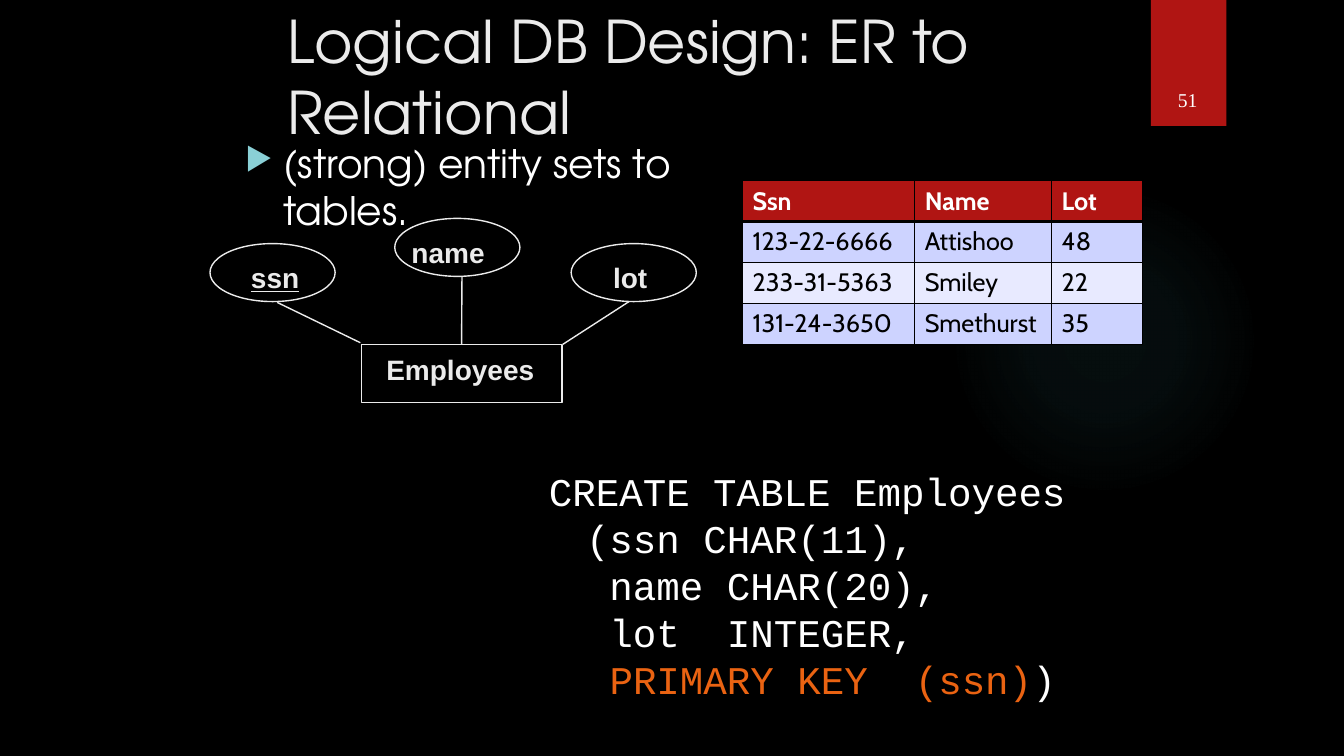
from dataclasses import dataclass
from typing import Optional

from lxml import etree
from pptx import Presentation
from pptx.dml.color import RGBColor
from pptx.enum.shapes import MSO_CONNECTOR, MSO_SHAPE
from pptx.enum.text import MSO_ANCHOR, MSO_AUTO_SIZE, PP_ALIGN
from pptx.oxml import parse_xml
from pptx.oxml.ns import nsdecls, qn
from pptx.util import Inches, Length, Pt

OVAL, RECTANGLE = MSO_SHAPE.OVAL, MSO_SHAPE.RECTANGLE
STRAIGHT = MSO_CONNECTOR.STRAIGHT
TOP, BOTTOM = MSO_ANCHOR.TOP, MSO_ANCHOR.BOTTOM
LEFT, CENTER = PP_ALIGN.LEFT, PP_ALIGN.CENTER
GROW, FIXED = MSO_AUTO_SIZE.SHAPE_TO_FIT_TEXT, MSO_AUTO_SIZE.NONE

BLACK = RGBColor(0x00, 0x00, 0x00)
WHITE = RGBColor(0xFF, 0xFF, 0xFF)
PALE = RGBColor(0xEB, 0xEB, 0xEB)
RED = RGBColor(0xB0, 0x15, 0x13)
ORANGE = RGBColor(0xEA, 0x63, 0x12)
AQUA = RGBColor(0x8A, 0xD0, 0xD6)
TEAL = RGBColor(0x50, 0xB9, 0xC1)
ROW_FILLS = (RGBColor(0xCD, 0xD3, 0xFF), RGBColor(0xE8, 0xEA, 0xFF))

HEADING_FONT, CODE_FONT = "TeX Gyre Adventor", "Courier New"

# The slide is a grid of 160 by 90 square units.
COLUMNS, ROWS = 160, 90
UNIT = Inches(1 / 12)


@dataclass(frozen=True)
class Area:
    column: float
    row: float
    columns: float
    rows: float

    def lengths(self) -> tuple[Length, ...]:
        return tuple(grid(n) for n in (self.column, self.row, self.columns, self.rows))


@dataclass(frozen=True)
class Style:
    font: str
    size: float
    color: RGBColor
    bold: bool = False
    underline: bool = False


@dataclass(frozen=True)
class Node:
    """An outlined figure of the diagram and its label."""
    text: str
    kind: int
    area: Area
    label: Area
    underline: bool = False


@dataclass(frozen=True)
class Link:
    start: tuple[float, float]
    end: tuple[float, float]
    joins_entity: bool = False


CODE = Style(CODE_FONT, 28, WHITE)
KEY = Style(CODE_FONT, 28, ORANGE)
CODE_LINES = (
    ((" ", Style("TeX Gyre Pagella", 28, WHITE)), ("CREATE TABLE Employees", CODE)),
    (("  (ssn CHAR(11),", CODE),),
    (("   name CHAR(20),", CODE),),
    (("   lot  INTEGER,", CODE),),
    (("   ", CODE), ("PRIMARY KEY  (ssn)", KEY), (")", CODE)),
)

ENTITY = Node("Employees", RECTANGLE, Area(43, 41, 23.9, 6.9), Area(44.8, 41.4, 20.1, 5.2))
ATTRIBUTES = (
    Node("ssn", OVAL, Area(25, 29, 14.9, 6.9), Area(28.7, 30.4, 8.2, 5.2), True),
    Node("name", OVAL, Area(47, 26, 14.9, 6.9), Area(47.8, 27.4, 11.1, 5.2)),
    Node("lot", OVAL, Area(68, 29, 14.9, 6.9), Area(71.8, 30.4, 6.5, 5.2)),
)
LINKS = (
    Link((33, 36), (42.9, 40.8)),
    Link((55, 33), (55, 41), True),
    Link((67, 41), (74.9, 35.9)),
)

TABLE_AREA = Area(88.4, 21.5, 47.7, 19.5)
TABLE_COLUMNS = (20.5, 16.3, 10.8)
RECORDS = (
    ("Ssn", "Name", "Lot"),
    ("123-22-6666", "Attishoo", "48"),
    ("233-31-5363", "Smiley", "22"),
    ("131-24-3650", "Smethurst", "35"),
)


def grid(units: float) -> Length:
    return Length(round(units * UNIT))


def add_run(paragraph, text: str, style: Style) -> None:
    run = paragraph.add_run()
    run.text = text
    run.font.name = style.font
    run.font.size = Pt(style.size)
    run.font.bold = style.bold
    run.font.underline = style.underline
    run.font.color.rgb = style.color


def add_text(slide, area: Area, lines, wrap: bool = True, resize=FIXED,
             anchor=TOP, align=LEFT, spacing: Optional[Length] = None):
    """Add a text box; each line is a sequence of (text, style) runs."""
    frame = slide.shapes.add_textbox(*area.lengths()).text_frame
    frame.word_wrap = wrap
    frame.auto_size = resize
    frame.vertical_anchor = anchor
    for index, line in enumerate(lines):
        paragraph = frame.add_paragraph() if index else frame.paragraphs[0]
        paragraph.alignment = align
        if spacing is not None:
            paragraph.line_spacing = spacing
        for text, style in line:
            add_run(paragraph, text, style)
    return frame


def add_figure(slide, kind: int, area: Area):
    shape = slide.shapes.add_shape(kind, *area.lengths())
    shape.shadow.inherit = False
    shape.fill.background()
    shape.line.fill.background()
    return shape


def add_glow(slide) -> None:
    glow = add_figure(slide, OVAL, Area(113, 22, 37, 37))
    stops = "".join(
        f'<a:gs pos="{place * 1000}"><a:srgbClr val="{TEAL}">'
        f'<a:alpha val="{opacity * 1000}"/></a:srgbClr></a:gs>'
        for place, opacity in ((0, 7), (36, 6), (69, 0), (100, 0)))
    gradient = parse_xml(
        f'<a:gradFill {nsdecls("a")} rotWithShape="1"><a:gsLst>{stops}</a:gsLst>'
        '<a:path path="circle"><a:fillToRect l="50000" t="50000" r="50000" b="50000"/>'
        '</a:path></a:gradFill>')
    properties = glow.element.spPr
    properties.replace(properties.find(qn("a:noFill")), gradient)


def add_bullet(paragraph) -> None:
    properties = paragraph._p.get_or_add_pPr()
    properties.set("marL", str(Inches(0.38)))
    properties.set("indent", str(-Inches(0.38)))
    color = etree.SubElement(properties, qn("a:buClr"))
    etree.SubElement(color, qn("a:srgbClr"), val=str(AQUA))
    etree.SubElement(properties, qn("a:buSzPct"), val="80000")
    etree.SubElement(properties, qn("a:buChar"), char="▶")


def add_node(slide, node: Node):
    figure = add_figure(slide, node.kind, node.area)
    figure.line.color.rgb = PALE
    figure.line.width = Pt(1)
    style = Style("Arial", 20, PALE, bold=True, underline=node.underline)
    add_text(slide, node.label, [[(node.text, style)]], wrap=False, resize=GROW)
    return figure


def add_link(slide, link: Link, entity) -> None:
    ends = (grid(n) for n in (*link.start, *link.end))
    connector = slide.shapes.add_connector(STRAIGHT, *ends)
    if link.joins_entity:
        connector.end_connect(entity, 0)
    connector.line.color.rgb = PALE
    connector.line.width = Pt(1)
    etree.SubElement(connector.element.spPr, qn("a:effectLst"))


def set_borders(cell, top: float, bottom: float) -> None:
    properties = cell._tc.get_or_add_tcPr()
    for index, (side, width) in enumerate((("L", 1), ("R", 1), ("T", top), ("B", bottom))):
        properties.insert(index, parse_xml(
            f'<a:ln{side} {nsdecls("a")} w="{Pt(width)}"><a:solidFill>'
            f'<a:srgbClr val="{BLACK}"/></a:solidFill></a:ln{side}>'))


def add_records(slide) -> None:
    table = slide.shapes.add_table(
        len(RECORDS), len(TABLE_COLUMNS), *TABLE_AREA.lengths()).table
    for column, width in zip(table.columns, TABLE_COLUMNS):
        column.width = grid(width)
    for row, record in enumerate(RECORDS):
        header = row == 0
        style = Style("Cabin", 18, WHITE if header else BLACK, bold=header)
        for column, text in enumerate(record):
            cell = table.cell(row, column)
            cell.fill.solid()
            cell.fill.fore_color.rgb = RED if header else ROW_FILLS[(row - 1) % 2]
            set_borders(cell, top=3 if row == 1 else 1, bottom=3 if header else 1)
            add_run(cell.text_frame.paragraphs[0], text, style)


def main() -> None:
    presentation = Presentation()
    presentation.slide_width, presentation.slide_height = grid(COLUMNS), grid(ROWS)
    slide = presentation.slides.add_slide(presentation.slide_layouts[6])
    slide.background.fill.solid()
    slide.background.fill.fore_color.rgb = BLACK

    add_glow(slide)
    tab = add_figure(slide, RECTANGLE, Area(137, 0, 9, 15))
    tab.fill.solid()
    tab.fill.fore_color.rgb = RED
    add_text(slide, Area(135.9, 3.8, 11, 10.1), [[("51", Style("Times New Roman", 14, WHITE))]],
             anchor=BOTTOM, align=CENTER)
    add_text(slide, Area(33, 0, 112, 14.5),
             [[("Logical DB Design: ER to Relational", Style(HEADING_FONT, 42, PALE))]])
    body = add_text(slide, Area(28, 16, 55, 12),
                    [[("(strong) entity sets to tables.", Style(HEADING_FONT, 28, WHITE))]])
    add_bullet(body.paragraphs[0])
    add_text(slide, Area(63, 55, 72, 29.2), CODE_LINES, resize=GROW, spacing=Pt(33.6))

    entity = add_node(slide, ENTITY)
    for attribute in ATTRIBUTES:
        add_node(slide, attribute)
    for link in LINKS:
        add_link(slide, link, entity)
    add_records(slide)
    presentation.save("out.pptx")


if __name__ == "__main__":
    main()
